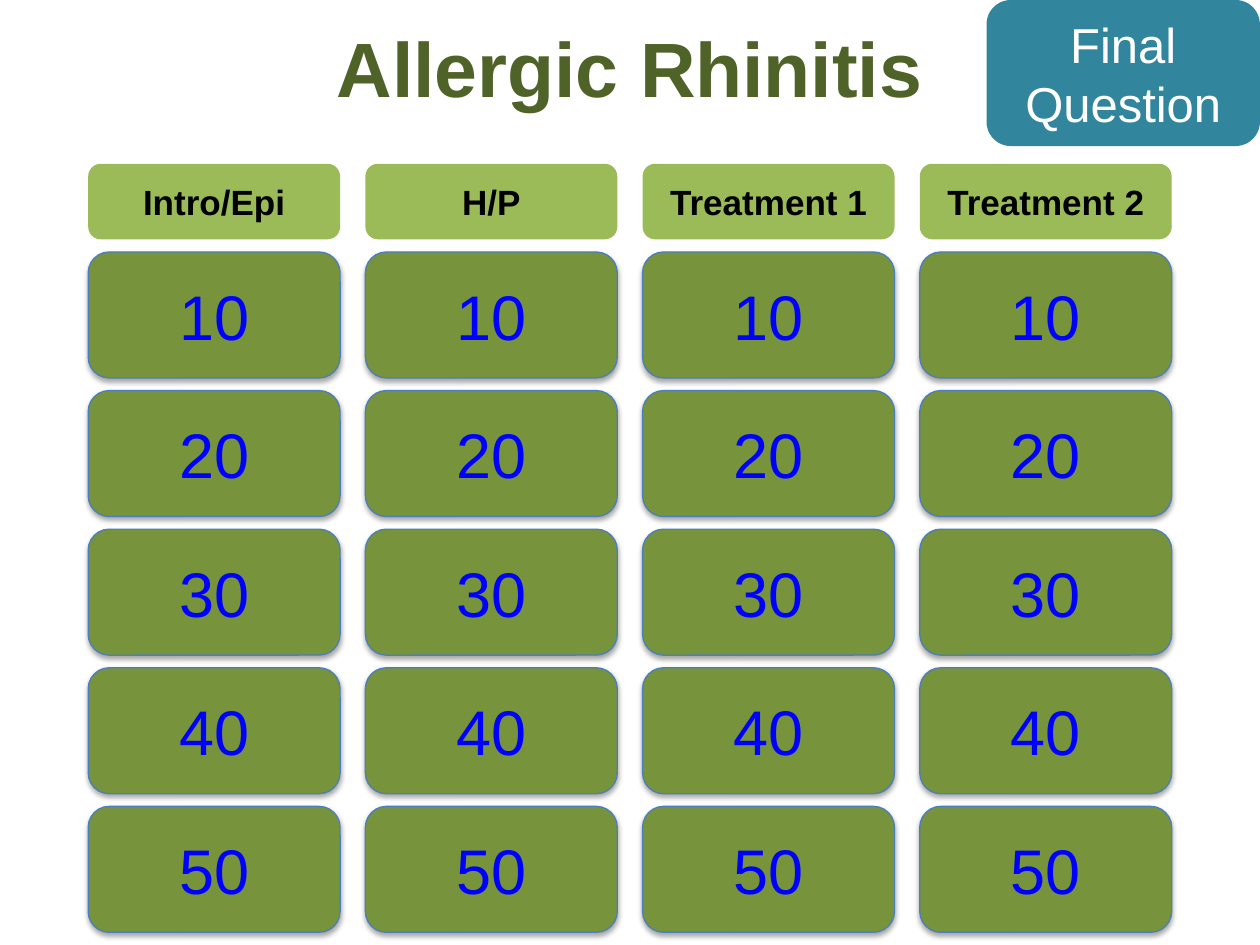
from lxml import etree
from pptx import Presentation
from pptx.dml.color import RGBColor
from pptx.enum.shapes import MSO_SHAPE
from pptx.enum.text import MSO_ANCHOR, PP_ALIGN
from pptx.oxml.ns import qn
from pptx.util import Emu, Pt

ROUNDED = MSO_SHAPE.ROUNDED_RECTANGLE
MIDDLE = MSO_ANCHOR.MIDDLE
CENTER = PP_ALIGN.CENTER

PX = 9144
FONT = "Arial"
DARK_GREEN = RGBColor(0x4F, 0x62, 0x28)
LIGHT_GREEN = RGBColor(0x9B, 0xBB, 0x59)
CARD_GREEN = RGBColor(0x77, 0x93, 0x3C)
TEAL = RGBColor(0x31, 0x85, 0x9C)
OUTLINE_BLUE = RGBColor(0x4B, 0x7E, 0xBC)
LINK_BLUE = RGBColor(0x00, 0x00, 0xFF)
BLACK = RGBColor(0x00, 0x00, 0x00)
WHITE = RGBColor(0xFF, 0xFF, 0xFF)

CATEGORIES = ["Intro/Epi", "H/P", "Treatment 1", "Treatment 2"]
POINTS = [10, 20, 30, 40, 50]
GRID_LEFT, COLUMN_STEP, CARD_WIDTH = 70, 220, 200
HEADER_TOP, HEADER_HEIGHT = 130, 60
CARD_TOP, ROW_STEP, CARD_HEIGHT = 200, 110, 100


def px(*lengths):
    return [Emu(length * PX) for length in lengths]


def set_text(shape, text, size, color, bold=False):
    frame = shape.text_frame
    frame.word_wrap = True
    frame.vertical_anchor = MIDDLE
    paragraph = frame.paragraphs[0]
    paragraph.text = text
    paragraph.alignment = CENTER
    font = paragraph.font
    font.name = FONT
    font.size = Pt(size)
    font.bold = bold
    font.color.rgb = color
    return paragraph


def add_title(slide, text):
    box = slide.shapes.add_textbox(*px(50, 0, 900, 116))
    paragraph = set_text(box, text, 44, DARK_GREEN, bold=True)
    paragraph.line_spacing = 0.9


def add_panel(slide, bounds, fill, text, size, color, bold=False):
    shape = slide.shapes.add_shape(ROUNDED, *px(*bounds))
    shape.shadow.inherit = False
    shape.fill.solid()
    shape.fill.fore_color.rgb = fill
    shape.line.fill.background()
    set_text(shape, text, size, color, bold)
    return shape


def add_drop_shadow(shape):
    effects = shape._element.spPr.find(qn("a:effectLst"))
    shadow = etree.SubElement(
        effects, qn("a:outerShdw"), blurRad=str(Pt(3.1)), dist=str(Pt(1.8)),
        dir="5400000", rotWithShape="0")
    color = etree.SubElement(shadow, qn("a:srgbClr"), val=str(BLACK))
    etree.SubElement(color, qn("a:alpha"), val="35000")


def add_card(slide, left, top, points):
    card = add_panel(slide, (left, top, CARD_WIDTH, CARD_HEIGHT),
                     CARD_GREEN, str(points), 36, LINK_BLUE)
    card.line.color.rgb = OUTLINE_BLUE
    card.line.width = Pt(0.75)
    add_drop_shadow(card)


def main():
    presentation = Presentation()
    presentation.slide_width, presentation.slide_height = px(1000, 750)
    slide = presentation.slides.add_slide(presentation.slide_layouts[6])

    add_title(slide, "Allergic Rhinitis")
    add_panel(slide, (783, 0, 217, 116), TEAL, "Final Question", 28, WHITE)
    for column, category in enumerate(CATEGORIES):
        left = GRID_LEFT + column * COLUMN_STEP
        add_panel(slide, (left, HEADER_TOP, CARD_WIDTH, HEADER_HEIGHT),
                  LIGHT_GREEN, category, 20, BLACK, bold=True)
        for row, points in enumerate(POINTS):
            add_card(slide, left, CARD_TOP + row * ROW_STEP, points)

    presentation.save("out.pptx")


if __name__ == "__main__":
    main()
